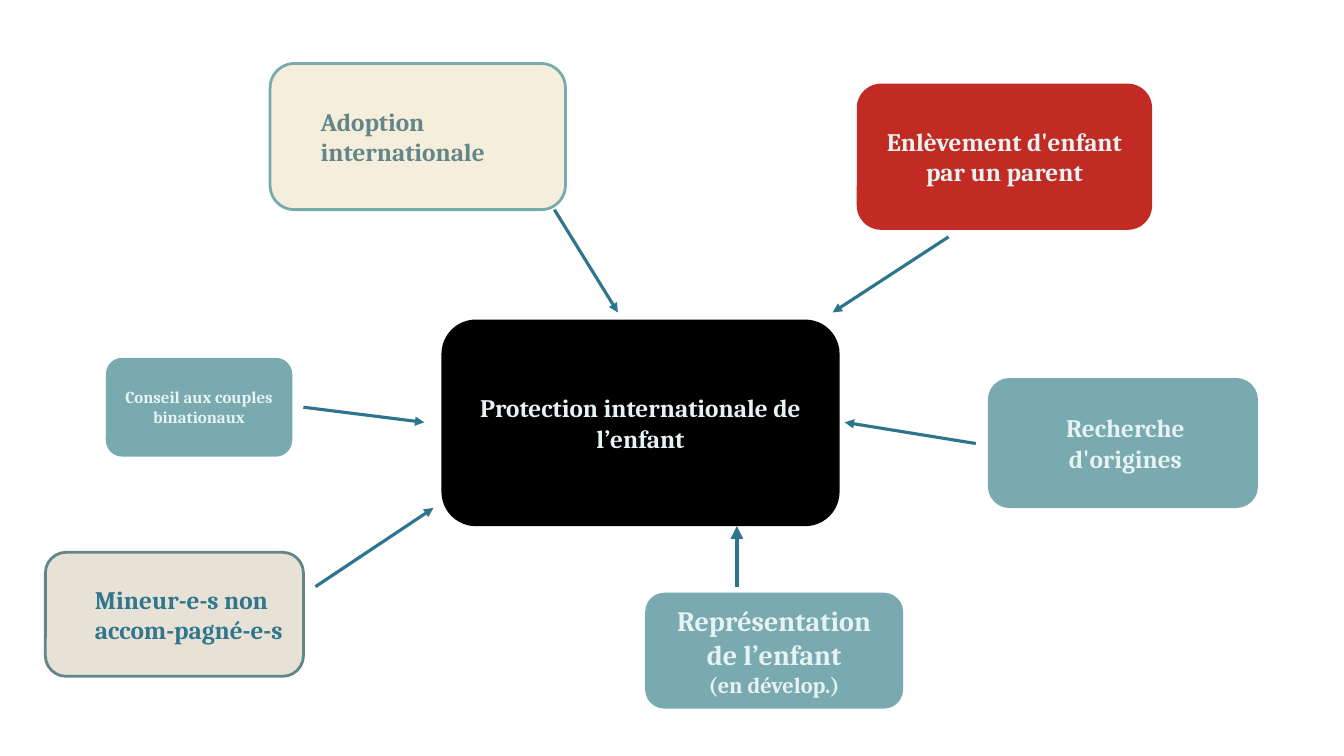
from pptx import Presentation
from pptx.dml.color import RGBColor
from pptx.enum.shapes import MSO_CONNECTOR, MSO_SHAPE
from pptx.enum.text import MSO_ANCHOR, PP_ALIGN
from pptx.oxml.ns import qn
from pptx.util import Inches, Pt
from lxml.etree import SubElement

COLS, ROWS = 80, 45
TEAL, SLATE, PALE, BLUE = "78AAB0", "62868A", "E7F2F3", "2C758D"


def rgb(value):
    return RGBColor.from_string(value)


class Board:
    font = "Cambria"

    def __init__(self, prs, background):
        self.col = prs.slide_width / COLS
        self.row = prs.slide_height / ROWS
        self.slide = prs.slides.add_slide(prs.slide_layouts[6])
        fill = self.slide.background.fill
        fill.solid()
        fill.fore_color.rgb = rgb(background)

    def place(self, x, y):
        return round(x * self.col), round(y * self.row)

    def box(self, at, lines, fill, color=PALE, border=None,
            align=PP_ALIGN.CENTER, indent=0):
        x, y, w, h = at
        sp = self.slide.shapes.add_shape(
            MSO_SHAPE.ROUNDED_RECTANGLE, *self.place(x, y), *self.place(w, h))
        sp.shadow.inherit = False
        sp.fill.solid()
        sp.fill.fore_color.rgb = rgb(fill)
        if border:
            sp.line.color.rgb = rgb(border)
            sp.line.width = Pt(2)
        else:
            sp.line.fill.background()
        tf = sp.text_frame
        tf.word_wrap = True
        tf.vertical_anchor = MSO_ANCHOR.MIDDLE
        for i, (text, size) in enumerate(lines):
            p = tf.add_paragraph() if i else tf.paragraphs[0]
            p.text = text
            p.alignment = align
            if indent:
                pPr = p._p.get_or_add_pPr()
                pPr.set("marL", str(round(indent * self.col)))
                pPr.set("indent", "0")
            p.font.name = self.font
            p.font.size = Pt(size)
            p.font.bold = True
            p.font.color.rgb = rgb(color)

    def arrow(self, start, end, width=2.25):
        line = self.slide.shapes.add_connector(
            MSO_CONNECTOR.STRAIGHT, *self.place(*start), *self.place(*end))
        line.line.color.rgb = rgb(BLUE)
        line.line.width = Pt(width)
        SubElement(line.line._get_or_add_ln(), qn("a:tailEnd"), type="triangle")
        SubElement(line._element.spPr, qn("a:effectLst"))


def main():
    prs = Presentation()
    prs.slide_width, prs.slide_height = Inches(13.33), Inches(7.5)
    board = Board(prs, "FEFFFE")

    board.box((26.28, 19.02, 23.7, 12.3),
              [("Protection internationale de l’enfant", 18)], "000000")
    board.box((51, 4.98, 17.58, 8.7),
              [("Enlèvement d'enfant par un parent", 18)], "C12B23")
    board.box((6.3, 21.3, 11.1, 5.88),
              [("Conseil aux couples binationaux", 12)], TEAL)
    board.box((16.08, 3.78, 17.58, 8.7), [("Adoption internationale", 18)],
              "F5EEDA", SLATE, TEAL, PP_ALIGN.LEFT, 2)
    board.box((58.8, 22.5, 16.08, 7.74),
              [("Recherche d'origines", 18)], TEAL, indent=0.3)
    board.box((38.4, 35.28, 15.36, 6.9),
              [("Représentation de l’enfant", 20), ("(en dévelop.)", 16)], TEAL)
    board.box((2.7, 32.88, 15.36, 7.38),
              [("Mineur-e-s non accom-pagné-e-s", 18)],
              "E8E1D5", "2F768E", SLATE, PP_ALIGN.LEFT, 2)

    board.arrow((56.46, 14.1), (49.56, 18.6))
    board.arrow((33, 12.48), (36.78, 18.6))
    board.arrow((18.06, 24.24), (25.26, 25.14))
    board.arrow((18.78, 34.92), (25.8, 30.24))
    board.arrow((43.86, 34.92), (43.86, 31.32), 3)
    board.arrow((58.08, 26.4), (50.28, 25.14))

    prs.save("out.pptx")


if __name__ == "__main__":
    main()
